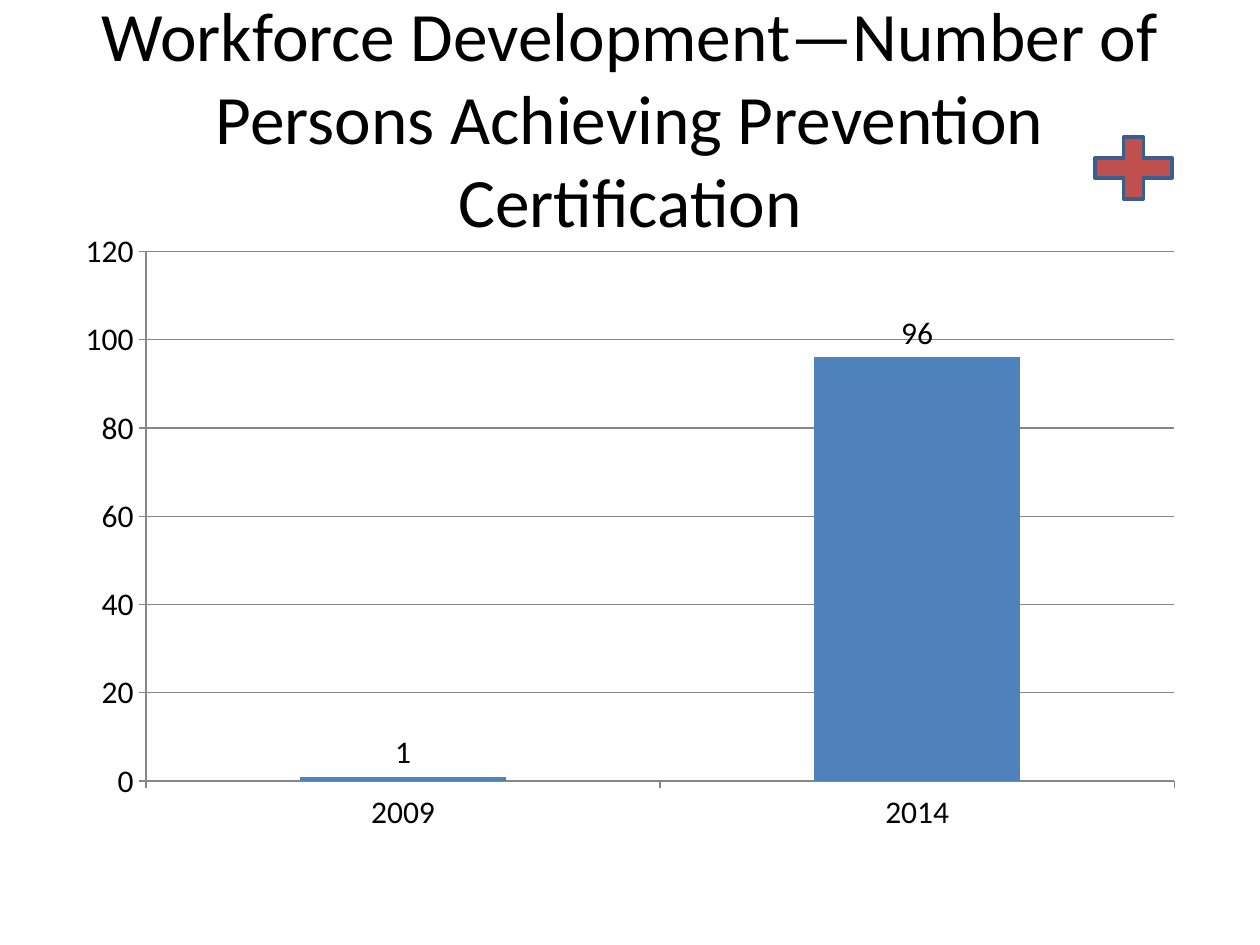
import dataclasses

import pptx
import pptx.chart.data
import pptx.dml.color
import pptx.enum.chart
import pptx.enum.shapes
import pptx.enum.text
import pptx.util


@dataclasses.dataclass(frozen=True)
class Theme:
    font: str = "Calibri"
    text: str = "000000"
    bar: str = "4F81BD"
    grid: str = "878787"
    plus: str = "C0504D"
    plus_line: str = "3A5F8C"
    title_size: float = 39.6
    chart_size: float = 18


THEME = Theme()
PIXELS_PER_INCH = 126


def px(length):
    return pptx.util.Inches(length / PIXELS_PER_INCH)


def box(left, top, width, height):
    return px(left), px(top), px(width), px(height)


def rgb(value):
    return pptx.dml.color.RGBColor.from_string(value)


def format_font(font, size, color=THEME.text):
    font.name = THEME.font
    font.size = pptx.util.Pt(size)
    font.color.rgb = rgb(color)


def write_text(shape, text, size, color=THEME.text, align=pptx.enum.text.PP_ALIGN.CENTER):
    frame = shape.text_frame
    frame.word_wrap = True
    frame.auto_size = pptx.enum.text.MSO_AUTO_SIZE.NONE
    frame.vertical_anchor = pptx.enum.text.MSO_ANCHOR.MIDDLE
    paragraph = frame.paragraphs[0]
    paragraph.alignment = align
    run = paragraph.add_run()
    run.text = text
    format_font(run.font, size, color)


def add_title(slide, text, bounds):
    title = slide.shapes.title
    title.left, title.top, title.width, title.height = box(*bounds)
    write_text(title, text, THEME.title_size)


def format_axis(axis):
    axis.major_tick_mark = pptx.enum.chart.XL_TICK_MARK.OUTSIDE
    axis.minor_tick_mark = pptx.enum.chart.XL_TICK_MARK.NONE
    axis.format.line.color.rgb = rgb(THEME.grid)


def add_column_chart(slide, categories, values, bounds):
    data = pptx.chart.data.CategoryChartData()
    data.categories = categories
    data.add_series("Series 1", values)
    chart = slide.shapes.add_chart(
        pptx.enum.chart.XL_CHART_TYPE.COLUMN_CLUSTERED, *box(*bounds), data
    ).chart
    chart.has_legend = False
    chart.has_title = False
    format_font(chart.font, THEME.chart_size)

    format_axis(chart.category_axis)
    format_axis(chart.value_axis)
    chart.value_axis.minimum_scale = 0
    chart.value_axis.maximum_scale = 120
    chart.value_axis.major_unit = 20
    chart.value_axis.has_major_gridlines = True
    chart.value_axis.major_gridlines.format.line.color.rgb = rgb(THEME.grid)

    plot = chart.plots[0]
    plot.gap_width = 150
    plot.vary_by_categories = False
    fill = plot.series[0].format.fill
    fill.solid()
    fill.fore_color.rgb = rgb(THEME.bar)
    plot.has_data_labels = True
    labels = plot.data_labels
    labels.show_value = True
    labels.position = pptx.enum.chart.XL_LABEL_POSITION.OUTSIDE_END
    format_font(labels.font, THEME.chart_size)


def add_plus(slide, bounds):
    plus = slide.shapes.add_shape(pptx.enum.shapes.MSO_SHAPE.MATH_PLUS, *box(*bounds))
    plus.shadow.inherit = False
    plus.fill.solid()
    plus.fill.fore_color.rgb = rgb(THEME.plus)
    plus.line.color.rgb = rgb(THEME.plus_line)
    plus.line.width = pptx.util.Pt(2)


def main():
    """Build the workforce development slide."""
    presentation = pptx.Presentation()
    presentation.slide_width = px(1260)
    presentation.slide_height = px(945)
    slide = presentation.slides.add_slide(presentation.slide_layouts[5])
    add_title(
        slide,
        "Workforce Development—Number of Persons Achieving Prevention Certification",
        (63, 38, 1134, 158),
    )
    add_column_chart(slide, ["2009", "2014"], [1, 96], (63, 220, 1134, 624))
    add_plus(slide, (1081, 126, 105, 84))
    presentation.save("out.pptx")


if __name__ == "__main__":
    main()
